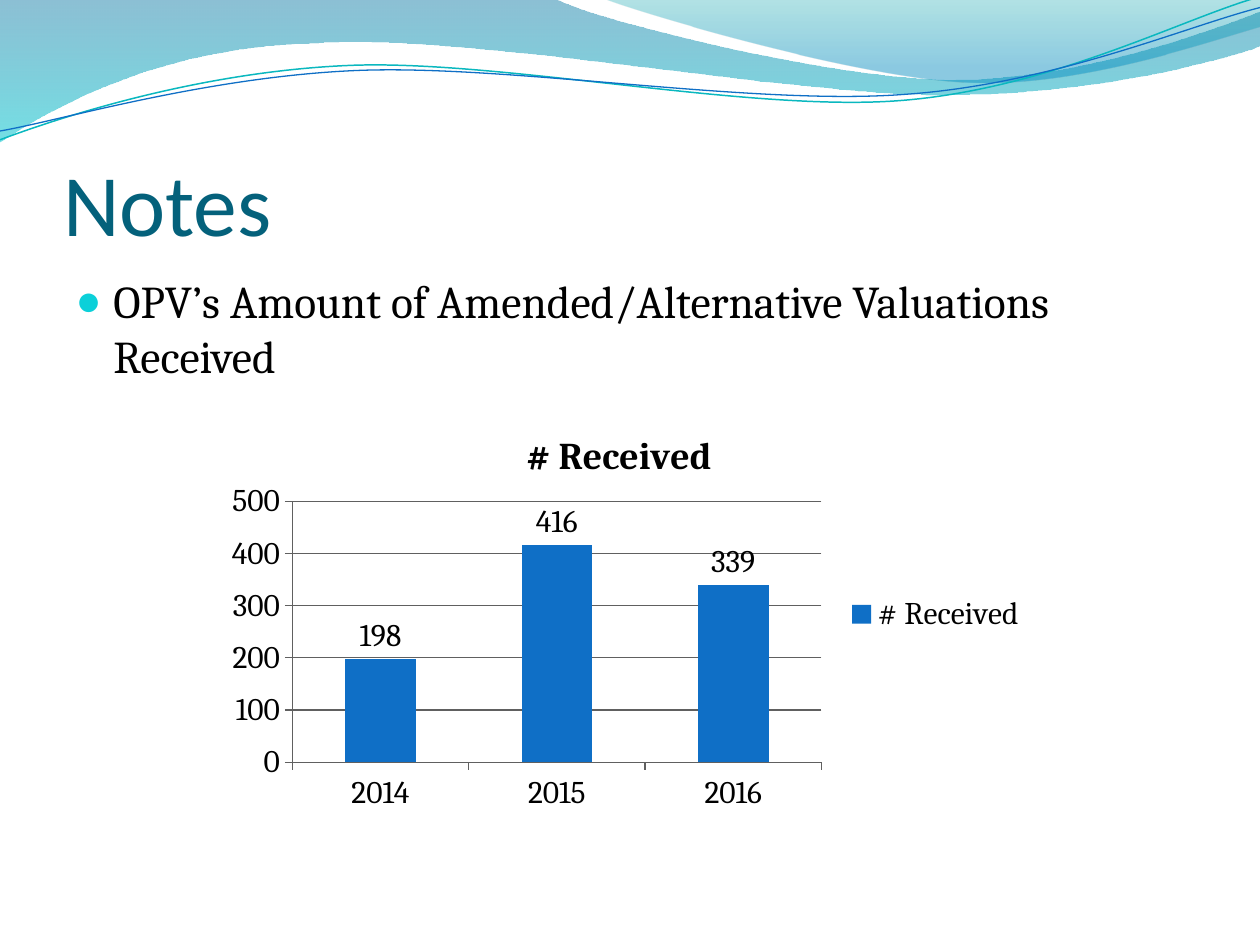
from lxml import etree
from pptx import Presentation
from pptx.chart.data import CategoryChartData
from pptx.dml.color import RGBColor
from pptx.enum import chart as ch, text
from pptx.oxml import parse_xml
from pptx.oxml.ns import nsdecls, qn
from pptx.util import Inches, Pt

TITLE = RGBColor(0x04, 0x61, 0x7B)
BLACK = RGBColor(0, 0, 0)
BLUE = RGBColor(0x0F, 0x6F, 0xC6)
TEAL = RGBColor(0x0A, 0xB8, 0xBF)
BULLET = RGBColor(0x0B, 0xD0, 0xD9)
GRID = RGBColor(0x60, 0x60, 0x60)


def add_wave(shapes, start, pieces, close):
    """Draw straight pieces (2 numbers) and cubic curves (6 numbers)."""
    fb = shapes.build_freeform(Inches(start[0]), Inches(start[1]))
    fb.add_line_segments([(Inches(p[-2]), Inches(p[-1])) for p in pieces], close=close)
    sp = fb.convert_to_shape()
    sp.shadow.inherit = False
    # Turn the segments of six numbers into curves
    segments = list(sp.element.iter(qn("a:lnTo")))
    for piece, segment in zip(pieces, segments):
        if len(piece) == 6:
            curve = etree.Element(qn("a:cubicBezTo"))
            for x, y in zip(piece[::2], piece[1::2]):
                etree.SubElement(curve, qn("a:pt"), x=str(Inches(x) - sp.left),
                                 y=str(Inches(y) - sp.top))
            segment.getparent().replace(segment, curve)
    return sp


def set_font(font, **values):
    color = values.pop("color")
    for name, value in values.items():
        setattr(font, name, value)
    font.color.rgb = color


prs = Presentation()
prs.slide_width, prs.slide_height = Inches(10), Inches(7.5)
s = prs.slides.add_slide(prs.slide_layouts[1])
title, body = s.placeholders

# Filled waves: start, pieces, gradient stops (position, colour, opacity)
fills = [
    ((0, 0),
     [(4.4, -0.01), (4.76, 0.17, 6.64, 0.63, 7.58, 0.63), (8.53, 0.63, 9.58, 0.26, 10, 0.09),
      (10.01, 0.36), (9.83, 0.44, 8.7, 0.76, 7.46, 0.75), (6.22, 0.75, 3.82, 0.28, 2.57, 0.34),
      (1.29, 0.36, 0.46, 0.83, -0.01, 1.13)],
     [(0, "0074A1", 45), (100, "00C6CF", 55)]),
    ((4.79, -0.01),
     [(5.09, 0.11, 6.82, 0.62, 7.69, 0.65), (8.56, 0.69, 9.61, 0.32, 10, 0.21), (10, 0)],
     [(0, "00A1A9", 30), (80, "008BBF", 45)]),
]
for start, pieces, stops in fills:
    sp = add_wave(s.shapes, start, pieces, True)
    sp.line.fill.background()
    gs = "".join(
        f'<a:gs pos="{pos * 1000}"><a:srgbClr val="{color}">'
        f'<a:alpha val="{alpha * 1000}"/></a:srgbClr></a:gs>' for pos, color, alpha in stops)
    sp.element.spPr.find(qn("a:custGeom")).addnext(parse_xml(
        f'<a:gradFill {nsdecls("a")}><a:gsLst>{gs}</a:gsLst><a:lin ang="5400000" scaled="0"/></a:gradFill>'))
    title.element.addprevious(sp.element)

# Thin wave lines
lines = [
    ((0, 1.11), [(0.48, 0.93, 1.58, 0.57, 2.77, 0.52), (3.95, 0.47, 5.93, 0.89, 7.13, 0.8),
                 (8.33, 0.71, 9.38, 0.15, 9.98, -0.02)], TEAL, 0.85),
    ((0, 1.04), [(0.47, 0.96, 1.64, 0.61, 2.83, 0.56), (4.03, 0.51, 5.97, 0.84, 7.17, 0.75),
                 (8.36, 0.67, 9.41, 0.21, 10, 0.06)], BLUE, 0.75),
]
for start, pieces, color, width in lines:
    sp = add_wave(s.shapes, start, pieces, False)
    sp.fill.background()
    sp.line.color.rgb = color
    sp.line.width = Pt(width)
    title.element.addprevious(sp.element)

# Title and bullet text
blocks = [
    (title, (0.5, 0.77, 9, 1.25), "Notes", dict(size=Pt(50), name="Calibri", color=TITLE),
     dict(margin_left=0, margin_right=0, margin_top=Inches(0.05), margin_bottom=0,
          vertical_anchor=text.MSO_ANCHOR.BOTTOM)),
    (body, (0.5, 2.12, 9, 4.8), "OPV’s Amount of Amended/Alternative Valuations Received",
     dict(size=Pt(26), name="Cambria", color=BLACK),
     dict(vertical_anchor=text.MSO_ANCHOR.TOP)),
]
for sp, box, words, font, frame in blocks:
    sp.left, sp.top, sp.width, sp.height = map(Inches, box)
    tf = sp.text_frame
    for name, value in dict(frame, word_wrap=True, auto_size=text.MSO_AUTO_SIZE.NONE).items():
        setattr(tf, name, value)
    p = tf.paragraphs[0]
    p.alignment = text.PP_ALIGN.LEFT
    r = p.add_run()
    r.text = words
    set_font(r.font, **font)

# Bullet look
p = body.text_frame.paragraphs[0]
p.space_before = Pt(5)
pPr = p._p.get_or_add_pPr()
pPr.set("marL", str(Inches(0.3)))
pPr.set("indent", str(Inches(-0.3)))
color = etree.SubElement(pPr, qn("a:buClr"))
etree.SubElement(color, qn("a:srgbClr"), val=str(BULLET))
etree.SubElement(pPr, qn("a:buSzPct"), val="95000")
etree.SubElement(pPr, qn("a:buChar"), char="●")

# Column chart
width, height = 6.67, 3.25
values = [198, 416, 339]
data = CategoryChartData()
data.categories = ["2014", "2015", "2016"]
data.add_series("# Received", values)
chart = s.shapes.add_chart(ch.XL_CHART_TYPE.COLUMN_CLUSTERED, Inches(1.58), Inches(3.25),
                           Inches(width), Inches(height), data).chart
set_font(chart.font, size=Pt(18), name="Cambria", color=BLACK)
chart.has_title = True
chart.chart_title.include_in_layout = False
chart.chart_title.text_frame.text = "# Received"
set_font(chart.chart_title.text_frame.paragraphs[0].runs[0].font,
         size=Pt(21.6), bold=True, name="Cambria", color=BLACK)
chart.has_legend = True
chart.legend.position = ch.XL_LEGEND_POSITION.RIGHT
chart.legend.include_in_layout = False

# Columns and their values
plot = chart.plots[0]
plot.gap_width = 150
plot.vary_by_categories = False
series = plot.series[0]
series.format.fill.solid()
series.format.fill.fore_color.rgb = BLUE
for i in range(len(values)):
    series.points[i].data_label.position = ch.XL_LABEL_POSITION.OUTSIDE_END

# Axes and grid
val = chart.value_axis
val.has_major_gridlines = True
for axis in (val, chart.category_axis):
    axis.major_tick_mark = ch.XL_TICK_MARK.OUTSIDE
for part in (val, chart.category_axis, val.major_gridlines):
    part.format.line.color.rgb = GRID
    part.format.line.width = Pt(0.75)

# Plot area position, as shares of the chart size
area = chart.element.find(".//" + qn("c:plotArea"))
for old in area.findall(qn("c:layout")):
    area.remove(old)
layout = etree.Element(qn("c:layout"))
manual = etree.SubElement(layout, qn("c:manualLayout"))
for tag, value in dict(layoutTarget="inner", xMode="edge", yMode="edge", x=0.74 / width,
                       y=0.73 / height, w=4.2 / width, h=2.07 / height).items():
    etree.SubElement(manual, qn("c:" + tag), val=str(value))
area.insert(0, layout)

prs.save("out.pptx")
